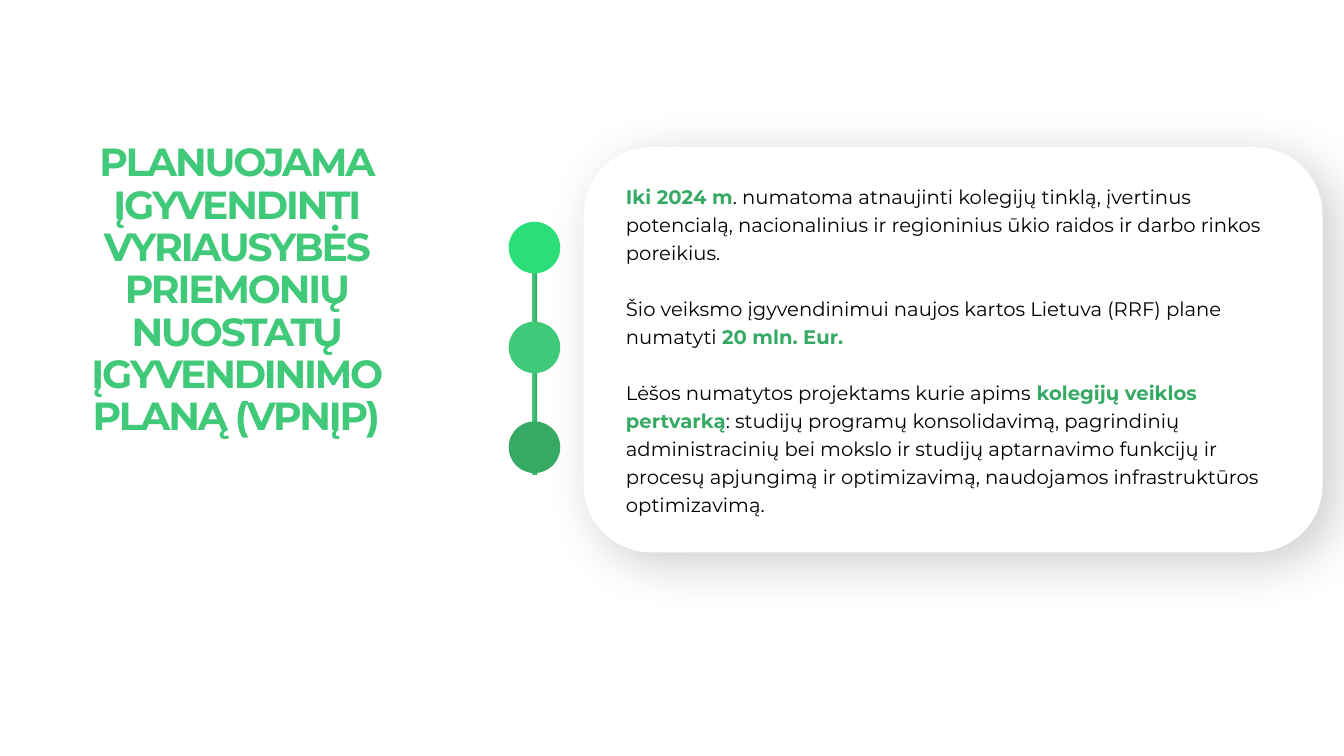
from dataclasses import dataclass

from lxml.etree import SubElement
from pptx import Presentation
from pptx.dml.color import RGBColor as Rgb
from pptx.enum.shapes import MSO_SHAPE as Preset
from pptx.enum.text import MSO_ANCHOR as Anchor, MSO_AUTO_SIZE as AutoSize, PP_ALIGN as Align
from pptx.oxml.ns import qn
from pptx.util import Cm, Pt


@dataclass(frozen=True)
class Theme:
    font: str = "Montserrat"
    heading_size: float = 28
    body_size: float = 14
    body_line: float = 20
    bright: Rgb = Rgb(0x2B, 0xDF, 0x78)
    green: Rgb = Rgb(0x40, 0xC9, 0x78)
    deep: Rgb = Rgb(0x36, 0xAA, 0x65)
    ink: Rgb = Rgb(0, 0, 0)
    paper: Rgb = Rgb(255, 255, 255)


@dataclass(frozen=True)
class Box:
    left: float
    top: float
    width: float
    height: float

    def lengths(self):
        return [Cm(side) for side in (self.left, self.top, self.width, self.height)]


THEME = Theme()
HEADING = "PLANUOJAMA ĮGYVENDINTI VYRIAUSYBĖS PRIEMONIŲ NUOSTATŲ ĮGYVENDINIMO PLANĄ (VPNĮP)"
MEASURES = [
    [
        ("Iki 2024 m", True),
        (". numatoma atnaujinti kolegijų tinklą, įvertinus potencialą, nacionalinius "
         "ir regioninius ūkio raidos ir darbo rinkos poreikius.", False),
    ],
    [
        ("Šio veiksmo įgyvendinimui naujos kartos Lietuva (RRF) plane numatyti ", False),
        ("20 mln. Eur.", True),
    ],
    [
        ("Lėšos numatytos projektams kurie apims ", False),
        ("kolegijų veiklos pertvarką", True),
        (": studijų programų konsolidavimą, pagrindinių administracinių bei mokslo ir "
         "studijų aptarnavimo funkcijų ir procesų apjungimą ir optimizavimą, naudojamos "
         "infrastruktūros optimizavimą.", False),
    ],
]


def place(shape, box):
    shape.left, shape.top, shape.width, shape.height = box.lengths()


def style(run, size, color, bold):
    run.font.name = THEME.font
    run.font.size = Pt(size)
    run.font.color.rgb = color
    run.font.bold = bold


def add_plain(slide, preset, box, color):
    shape = slide.shapes.add_shape(preset, *box.lengths())
    shape.shadow.inherit = False
    shape.line.fill.background()
    shape.fill.solid()
    shape.fill.fore_color.rgb = color
    return shape


def soften(card):
    effects = card.element.spPr.find(qn("a:effectLst"))
    shadow = SubElement(effects, qn("a:outerShdw"), blurRad=str(Pt(37)), dist=str(Pt(12)),
                        dir=str(43 * 60000), algn="tl", rotWithShape="0")
    black = SubElement(shadow, qn("a:srgbClr"), val=str(THEME.ink))
    SubElement(black, qn("a:alpha"), val="20000")


def heading(slide, box):
    title = slide.shapes.title
    place(title, box)
    frame = title.text_frame
    frame.text = HEADING
    frame.word_wrap = True
    frame.auto_size = AutoSize.NONE
    frame.vertical_anchor = Anchor.BOTTOM
    line = frame.paragraphs[0]
    line.alignment = Align.CENTER
    line.line_spacing = 0.9
    words = line.runs[0]
    style(words, THEME.heading_size, THEME.green, True)
    words.font._element.set("spc", "-150")


def timeline(slide, box):
    stem_width = 0.13
    stem = add_plain(slide, Preset.RECTANGLE,
                     Box(box.left + (box.width - stem_width) / 2, box.top + 0.4,
                         stem_width, box.height - 0.35), THEME.green)
    stem.fill.gradient()
    stem.fill.gradient_angle = 0
    for stop, color, position in zip(stem.fill.gradient_stops, (THEME.green, THEME.deep), (0.19, 1)):
        stop.color.rgb = color
        stop.position = position
    step = (box.height - box.width) / 2
    for index, color in enumerate((THEME.bright, THEME.green, THEME.deep)):
        add_plain(slide, Preset.OVAL,
                  Box(box.left, box.top + index * step, box.width, box.width), color)


def measures(slide, box):
    card = add_plain(slide, Preset.ROUNDED_RECTANGLE, box, THEME.paper)
    soften(card)
    body = slide.placeholders[1]
    body.element.addprevious(card.element)
    place(body, Box(box.left + 0.81, box.top + 0.71, box.width - 1.27, box.height - 1.42))
    frame = body.text_frame
    frame.word_wrap = True
    frame.auto_size = AutoSize.NONE
    frame.vertical_anchor = Anchor.TOP
    for index, parts in enumerate(MEASURES):
        measure = frame.add_paragraph() if index else frame.paragraphs[0]
        measure.alignment = Align.LEFT
        measure.line_spacing = Pt(THEME.body_line)
        measure.space_before = Pt(0)
        measure.space_after = Pt(THEME.body_line if index < len(MEASURES) - 1 else 0)
        layout = measure._p.get_or_add_pPr()
        layout.set("marL", "0")
        layout.set("indent", "0")
        SubElement(layout, qn("a:buNone"))
        for words, key in parts:
            run = measure.add_run()
            run.text = words
            style(run, THEME.body_size, THEME.deep if key else THEME.ink, key)


def main():
    deck = Presentation()
    deck.slide_width, deck.slide_height = Cm(33.87), Cm(19.05)
    slide = deck.slides.add_slide(deck.slide_layouts[1])
    heading(slide, Box(1.09, 3.43, 9.73, 7.77))
    timeline(slide, Box(12.82, 5.59, 1.3, 6.33))
    measures(slide, Box(14.71, 3.71, 18.62, 10.21))
    deck.save("out.pptx")


if __name__ == "__main__":
    main()
